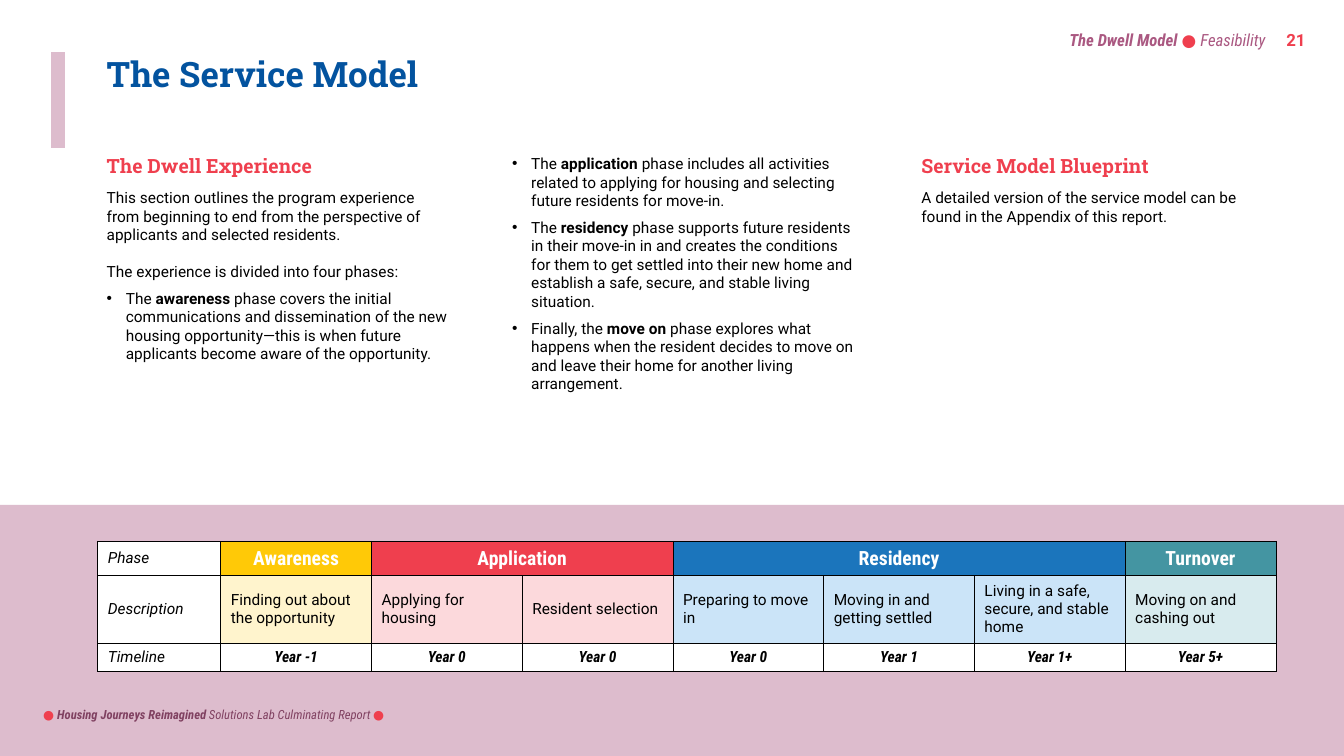
from lxml import etree
from pptx import Presentation
from pptx.dml.color import RGBColor
from pptx.enum.shapes import MSO_CONNECTOR, MSO_SHAPE
from pptx.enum.text import MSO_ANCHOR, PP_ALIGN
from pptx.oxml.ns import qn
from pptx.util import Inches, Pt

LEFT, CENTER, RIGHT = PP_ALIGN.LEFT, PP_ALIGN.CENTER, PP_ALIGN.RIGHT
TOP, MIDDLE = MSO_ANCHOR.TOP, MSO_ANCHOR.MIDDLE
RECT, STRAIGHT = MSO_SHAPE.RECTANGLE, MSO_CONNECTOR.STRAIGHT

BLACK = RGBColor(0, 0, 0)
WHITE = RGBColor(255, 255, 255)
PINK = RGBColor(0xDD, 0xBC, 0xCD)
RED = RGBColor(0xEF, 0x3F, 0x4E)
BLUE = RGBColor(0x03, 0x53, 0x9F)
MAUVE = RGBColor(0xAA, 0x58, 0x81)
PLUM = RGBColor(0x80, 0x41, 0x61)
BODY, SLIM, SLAB = "Roboto", "Roboto Condensed", "Roboto Slab"

PLAIN = (BODY, 11, BLACK, "")
BOLD = (BODY, 11, BLACK, "b")
LABEL = (BODY, 11, BLACK, "i")
YEAR = (SLIM, 11, BLACK, "bi")
PHASE = (SLIM, 14, WHITE, "b")
HEAD = (SLAB, 14, RED, "b")
TITLE = (SLAB, 25, BLUE, "b")
PAGE = (BODY, 12, RED, "b")

HEADS = ["The Dwell Experience", None, "Service Model Blueprint"]
TEXTS = [
    [
        {"runs": [("This section outlines the program experience from beginning to end from the "
                   "perspective of applicants and selected residents.", PLAIN)]},
        {"runs": [("The experience is divided into four phases:", PLAIN)], "before": 13, "after": 6},
        {"runs": [("The ", PLAIN), ("awareness ", BOLD),
                  ("phase covers the initial communications and dissemination of the new housing "
                   "opportunity—this is when future applicants become aware of the opportunity.",
                   PLAIN)], "bullet": True},
    ],
    [
        {"runs": [(lead, PLAIN), (name, BOLD), (rest, PLAIN)], "before": 6, "bullet": True}
        for lead, name, rest in [
            ("The ", "application ", "phase includes all activities related to applying for "
             "housing and selecting future residents for move-in."),
            ("The ", "residency ", "phase supports future residents in their move-in in and "
             "creates the conditions for them to get settled into their new home and establish "
             "a safe, secure, and stable living situation."),
            ("Finally, the ", "move on ", "phase explores what happens when the resident decides "
             "to move on and leave their home for another living arrangement."),
        ]
    ],
    [{"runs": [("A detailed version of the service model can be found in the Appendix of this "
                "report.", PLAIN)]}],
]
PHASES = [
    ("Awareness", RGBColor(0xFF, 0xC9, 0x07), RGBColor(0xFF, 0xF4, 0xCD),
     [("Finding out about the opportunity", "Year -1")]),
    ("Application", RED, RGBColor(0xFC, 0xD9, 0xDC),
     [("Applying for housing", "Year 0"), ("Resident selection", "Year 0")]),
    ("Residency", RGBColor(0x1B, 0x75, 0xBC), RGBColor(0xCB, 0xE4, 0xF8),
     [("Preparing to move in", "Year 0"), ("Moving in and getting settled", "Year 1"),
      ("Living in a safe, secure, and stable home", "Year 1+")]),
    ("Turnover", RGBColor(0x44, 0x95, 0xA2), RGBColor(0xD8, 0xEB, 0xEE),
     [("Moving on and cashing out", "Year 5+")]),
]
LABELS = ["Phase", "Description", "Timeline"]
RUNNING = [("The Dwell Model ", (SLIM, 12, MAUVE, "bi")), ("● ", (SLAB, 12, RED, "")),
           ("Feasibility", (SLIM, 12, MAUVE, "i"))]
FOOTER = [("● ", (SLAB, 9, RED, "")),
          ("Housing Journeys Reimagined ", (SLIM, 9, PLUM, "bi")),
          ("Solutions Lab Culminating Report ", (SLIM, 9, PLUM, "i")), ("●", (SLAB, 9, RED, ""))]

WIDE, HIGH = 13.33, 7.5
COLS = (0.96, 4.98, 9.04)
SPAN = 3.61
HEAD_TOP, HEAD_HIGH = 1.48, 0.34
ROWS = (0.34, 0.67, 0.28)
FIRST, STEP = 1.22, 1.495
BAND = HIGH * 0.668


def add_run(para, text, style):
    font_name, size, color, marks = style
    run = para.add_run()
    run.text = text
    font = run.font
    font.name, font.size = font_name, Pt(size)
    font.color.rgb = color
    font.bold, font.italic = "b" in marks, "i" in marks


def add_text(slide, box, paras, align=LEFT, anchor=TOP, line=None):
    frame = slide.shapes.add_textbox(*map(Inches, box)).text_frame
    frame.word_wrap = True
    frame.vertical_anchor = anchor
    for i, item in enumerate(paras):
        para = frame.add_paragraph() if i else frame.paragraphs[0]
        para.alignment = align
        para.line_spacing = line
        para.space_before = Pt(item.get("before", 0))
        para.space_after = Pt(item.get("after", 0))
        if item.get("bullet"):
            props = para._p.get_or_add_pPr()
            props.set("marL", str(Inches(0.19)))
            props.set("indent", str(-Inches(0.19)))
            etree.SubElement(props, qn("a:buFont"), typeface="Arial")
            etree.SubElement(props, qn("a:buChar"), char="•")
        for text, style in item["runs"]:
            add_run(para, text, style)


def fill_cell(cell, fill, text="", style=PLAIN, align=LEFT, anchor=MIDDLE):
    props = cell._tc.get_or_add_tcPr()
    for side in ("lnL", "lnR", "lnT", "lnB"):
        edge = etree.SubElement(props, qn("a:" + side), w=str(Pt(0.5)))
        paint = etree.SubElement(edge, qn("a:solidFill"))
        etree.SubElement(paint, qn("a:srgbClr"), val=str(BLACK))
    cell.fill.solid()
    cell.fill.fore_color.rgb = fill
    cell.vertical_anchor = anchor
    if text:
        para = cell.text_frame.paragraphs[0]
        para.alignment = align
        add_run(para, text, style)


def add_phases(slide):
    count = sum(len(steps) for *_, steps in PHASES)
    box = (0.97, 5.37, FIRST + STEP * count, sum(ROWS))
    table = slide.shapes.add_table(len(ROWS), count + 1, *map(Inches, box)).table
    table.first_row = table.horz_banding = False
    for i, column in enumerate(table.columns):
        column.width = Inches(STEP if i else FIRST)
    for row, high in zip(table.rows, ROWS):
        row.height = Inches(high)
    for i, label in enumerate(LABELS):
        fill_cell(table.cell(i, 0), WHITE, label, LABEL, anchor=TOP if i == 2 else MIDDLE)
    col = 1
    for name, dark, light, steps in PHASES:
        start = col
        for step, year in steps:
            fill_cell(table.cell(0, col), dark, name if col == start else "", PHASE, CENTER)
            fill_cell(table.cell(1, col), light, step)
            fill_cell(table.cell(2, col), WHITE, year, YEAR, CENTER, TOP)
            col += 1
        if len(steps) > 1:
            table.cell(0, start).merge(table.cell(0, col - 1))


def main():
    deck = Presentation()
    deck.slide_width, deck.slide_height = Inches(WIDE), Inches(HIGH)
    slide = deck.slides.add_slide(deck.slide_layouts[6])

    band = slide.shapes.add_shape(RECT, 0, Inches(BAND), Inches(WIDE), Inches(HIGH - BAND))
    band.shadow.inherit = False
    band.fill.solid()
    band.fill.fore_color.rgb = PINK
    band.line.fill.background()

    bar = slide.shapes.add_connector(STRAIGHT, *map(Inches, (0.58, 0.52, 0.58, 1.47)))
    bar.line.color.rgb, bar.line.width = PINK, Pt(10)
    etree.SubElement(bar._element.spPr, qn("a:effectLst"))

    add_text(slide, (12.66, 0.25, 0.47, 0.3), [{"runs": [("21", PAGE)]}], anchor=MIDDLE)
    add_text(slide, (10.04, 0.25, 2.61, 0.3), [{"runs": RUNNING}], RIGHT, MIDDLE)
    add_text(slide, (COLS[0], 0.52, SPAN, 0.96), [{"runs": [("The Service Model", TITLE)]}], line=0.9)
    for left, head, paras in zip(COLS, HEADS, TEXTS):
        top = HEAD_TOP
        if head:
            add_text(slide, (left, top, SPAN, HEAD_HIGH), [{"runs": [(head, HEAD)]}])
            top += HEAD_HIGH
        add_text(slide, (left, top, SPAN, 3.8 - top), paras)
    add_phases(slide)
    add_text(slide, (0.33, 6.96, SPAN, 0.25), [{"runs": FOOTER}], anchor=MIDDLE)

    deck.save("out.pptx")


if __name__ == "__main__":
    main()
